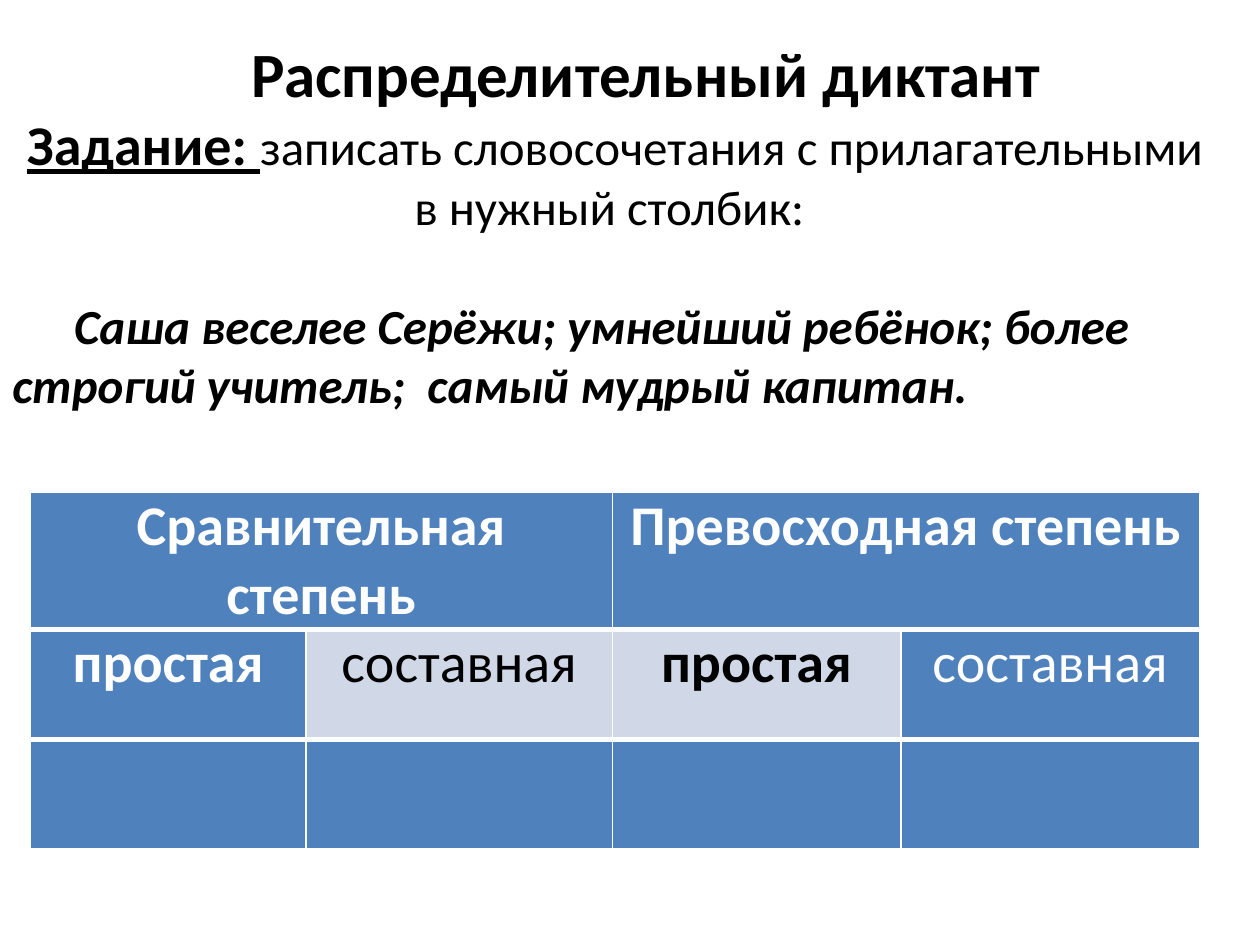
from dataclasses import dataclass
from lxml import etree
from pptx import Presentation
from pptx.dml.color import RGBColor
from pptx.enum.text import MSO_ANCHOR, PP_ALIGN
from pptx.oxml.ns import qn
from pptx.slide import Slide
from pptx.util import Inches, Pt

CENTER, LEFT = PP_ALIGN.CENTER, PP_ALIGN.LEFT
MIDDLE = MSO_ANCHOR.MIDDLE
COLORS = {"black": "000000", "white": "FFFFFF", "blue": "4F81BD", "pale": "D0D8E8"}


def add_text(paragraph, text, size=28, color="black", bold=False, italic=False, underline=False):
    """Append a formatted run to the paragraph."""
    run = paragraph.add_run()
    run.text = text
    font = run.font
    font.name, font.size = "Calibri", Pt(size)
    font.bold, font.italic, font.underline = bold, italic, underline
    font.color.rgb = RGBColor.from_string(COLORS[color])


@dataclass
class LessonSlide:
    """Style and current slide, with one method per kind of element."""
    slide: Slide
    indent: float = 0.49
    heading_size: int = 32

    def text_box(self, left, top, width, height, bottom_inset):
        """Add a wrapped, middle-anchored text frame."""
        box = self.slide.shapes.add_textbox(*map(Inches, (left, top, width, height)))
        frame = box.text_frame
        frame.word_wrap = True
        frame.vertical_anchor = MIDDLE
        frame.margin_bottom = Inches(bottom_inset)
        return frame

    def format_paragraph(self, paragraph, align, space_before=0):
        """Set alignment, first-line indent and leading space."""
        paragraph.alignment = align
        paragraph.space_before = Pt(space_before)
        properties = paragraph._p.get_or_add_pPr()
        properties.set("marL", "0")
        properties.set("indent", str(Inches(self.indent)))

    def table(self, left, top, widths, row_height, row_count):
        """Add a table with the given column widths and equal rows."""
        frame = self.slide.shapes.add_table(
            row_count, len(widths), Inches(left), Inches(top),
            Inches(sum(widths)), Inches(row_height * row_count))
        grid = frame.table
        for column, width in zip(grid.columns, widths):
            column.width = Inches(width)
        for row in grid.rows:
            row.height = Inches(row_height)
        return grid

    def cell(self, cell, fill, top_line, bottom_line):
        """Set borders, margins and fill of a table cell."""
        properties = cell._tc.get_or_add_tcPr()
        borders = {"a:lnL": 1, "a:lnR": 1, "a:lnT": top_line, "a:lnB": bottom_line}
        for side, width in borders.items():
            line = etree.SubElement(properties, qn(side), w=str(Pt(width)))
            solid = etree.SubElement(line, qn("a:solidFill"))
            etree.SubElement(solid, qn("a:srgbClr"), val=COLORS["white"])
        cell.margin_left = cell.margin_right = Inches(0.07)
        cell.margin_top = cell.margin_bottom = 0
        cell.fill.solid()
        cell.fill.fore_color.rgb = RGBColor.from_string(COLORS[fill])

    def cell_text(self, cell, text, color, bold):
        """Write a centred heading into a table cell."""
        paragraph = cell.text_frame.paragraphs[0]
        paragraph.alignment = CENTER
        add_text(paragraph, text, size=self.heading_size, color=color, bold=bold)


def main():
    """Build the dictation slide."""
    presentation = Presentation()
    presentation.slide_width, presentation.slide_height = Inches(10), Inches(7.5)
    lesson = LessonSlide(presentation.slides.add_slide(presentation.slide_layouts[6]))

    degrees = lesson.table(0.24, 3.91, [2.19, 2.43, 2.29, 2.37], 0.87, 3)
    fills = [["blue"] * 4, ["blue", "pale", "pale", "blue"], ["blue"] * 4]
    lines = [(1, 3), (3, 3), (3, 1)]
    for row, (row_fills, (top_line, bottom_line)) in enumerate(zip(fills, lines)):
        for column, fill in enumerate(row_fills):
            lesson.cell(degrees.cell(row, column), fill, top_line, bottom_line)

    for column, degree in ((0, "Сравнительная степень"), (2, "Превосходная степень")):
        heading = degrees.cell(0, column)
        heading.merge(degrees.cell(0, column + 1))
        lesson.cell_text(heading, degree, "white", True)
    for column, form in enumerate(["простая", "составная"] * 2):
        color = "black" if fills[1][column] == "pale" else "white"
        lesson.cell_text(degrees.cell(1, column), form, color, form == "простая")

    dictation = lesson.text_box(0, 0.21, 9.76, 3.43, bottom_inset=0.35)
    task = dictation.paragraphs[0]
    lesson.format_paragraph(task, CENTER)
    add_text(task, "Распределительный диктант", size=36, bold=True)
    task.add_line_break()
    add_text(task, "Задание:", size=32, bold=True, underline=True)
    add_text(task, " ", size=32, underline=True)
    add_text(task, "записать словосочетания с прилагательными в нужный столбик: ")
    phrases = dictation.add_paragraph()
    lesson.format_paragraph(phrases, LEFT, space_before=34)
    add_text(phrases, "Саша веселее Серёжи; умнейший ребёнок; более строгий учитель;  "
             "самый мудрый капитан.", bold=True, italic=True)

    presentation.save("out.pptx")


if __name__ == "__main__":
    main()
